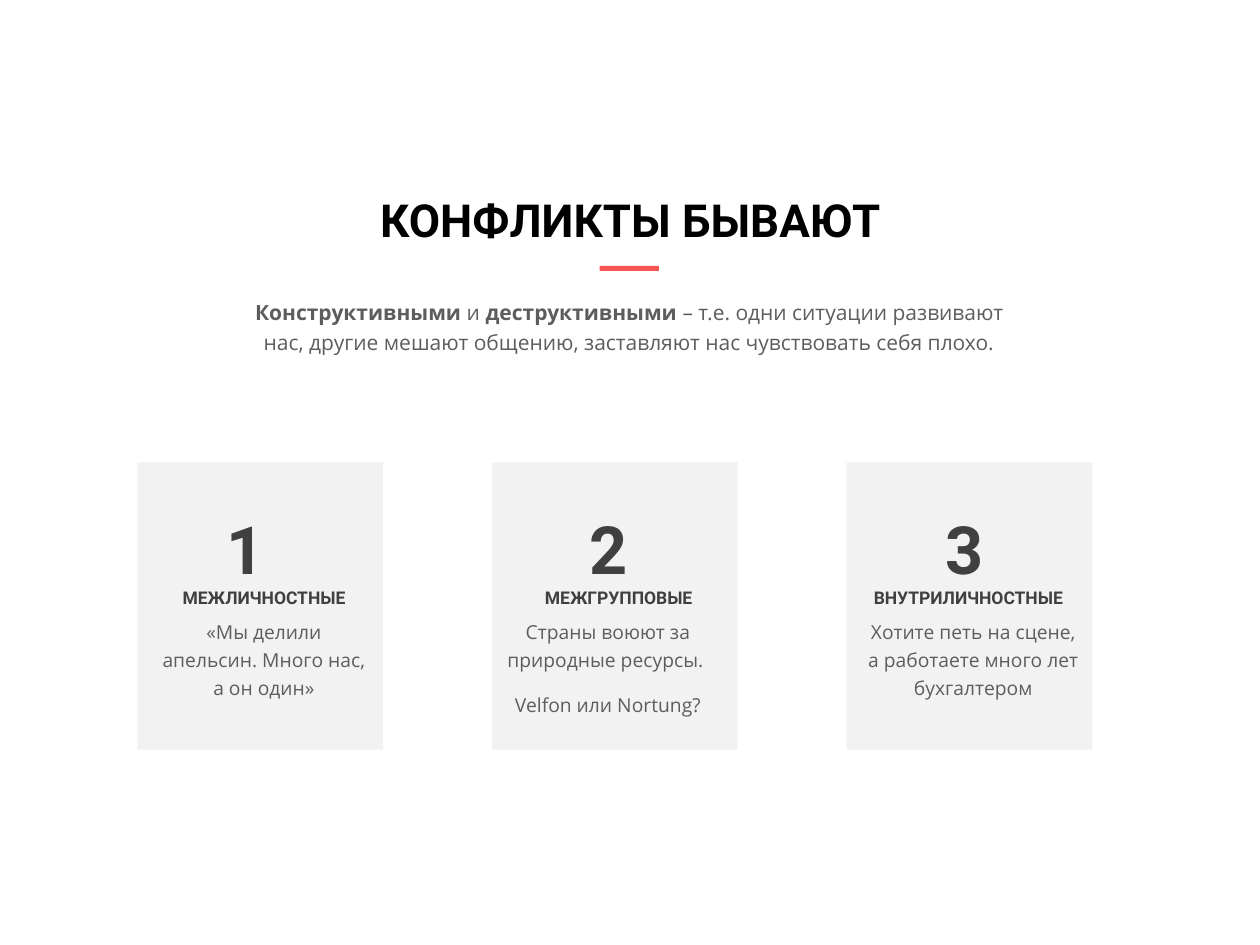
import pptx
import pptx.dml.color
import pptx.enum.shapes
import pptx.enum.text
import pptx.util

Inches = pptx.util.Inches
Pt = pptx.util.Pt

THEME = {
    "card": "F2F2F2",
    "accent": "F75655",
    "title": {"size": 26, "name": "Roboto", "color": "000000", "bold": True},
    "lead": {"size": 12, "name": "Open Sans", "color": "5D5D5D", "bold": False},
    "number": {"size": 38, "name": "Roboto", "color": "404040", "bold": True},
    "label": {"size": 10, "name": "Roboto", "color": "404040", "bold": True},
    "note": {"size": 11, "name": "Open Sans", "color": "5D5D5D", "bold": False},
}


def add_bar(page, left, top, width, height, color):
    """Add a plain filled rectangle without outline or shadow."""
    bar = page.shapes.add_shape(
        pptx.enum.shapes.MSO_SHAPE.RECTANGLE,
        Inches(left), Inches(top), Inches(width), Inches(height))
    bar.shadow.inherit = False
    bar.fill.solid()
    bar.fill.fore_color.rgb = pptx.dml.color.RGBColor.from_string(color)
    bar.line.fill.background()


def fill_text(box, paragraphs, style, wrap=True, line_spacing=1.0, side_inset=0.1):
    """Write paragraphs, each a list of (text, bold) spans; bold None keeps the style."""
    frame = box.text_frame
    settings = {
        "word_wrap": wrap,
        "auto_size": pptx.enum.text.MSO_AUTO_SIZE.NONE,
        "vertical_anchor": pptx.enum.text.MSO_ANCHOR.TOP,
        "margin_left": Inches(side_inset),
        "margin_right": Inches(side_inset),
    }
    for name, value in settings.items():
        setattr(frame, name, value)
    for index, spans in enumerate(paragraphs):
        para = frame.add_paragraph() if index else frame.paragraphs[0]
        para.alignment = pptx.enum.text.PP_ALIGN.CENTER
        para.line_spacing = line_spacing
        para.space_before = Pt(10 if index else 0)
        for text, bold in spans:
            span = para.add_run()
            span.text = text
            font_values = {
                "size": Pt(style["size"]),
                "name": style["name"],
                "bold": style["bold"] if bold is None else bold,
            }
            for name, value in font_values.items():
                setattr(span.font, name, value)
            span.font.color.rgb = pptx.dml.color.RGBColor.from_string(style["color"])


deck = pptx.Presentation()
deck.slide_width = Inches(10)
deck.slide_height = Inches(7.5)
page = deck.slides.add_slide(deck.slide_layouts.get_by_name("Title Only"))

# Heading
title = page.shapes.title
title_place = {"left": 1.86, "top": 1.47, "width": 6.29, "height": 0.44}
for name, value in title_place.items():
    setattr(title, name, Inches(value))
fill_text(title, [[("КОНФЛИКТЫ БЫВАЮТ", None)]], THEME["title"], wrap=False)
add_bar(page, 4.76, 2.11, 0.47, 0.04, THEME["accent"])

lead = page.shapes.add_textbox(Inches(1.85), Inches(2.29), Inches(6.29), Inches(0.83))
fill_text(lead, [[
    ("Конструктивными", True),
    (" и ", False),
    ("деструктивными", True),
    (" – т.е. одни ситуации развивают нас, другие мешают общению, "
     "заставляют нас чувствовать себя плохо.", False),
]], THEME["lead"], line_spacing=1.2)

# Cards: each text is paired with its left edge and width
CARD_LEFT, CARD_STEP = 1.09, 2.815
cards = [
    {"number": ("1 ", 1.17, 1.69),
     "label": ("МЕЖЛИЧНОСТНЫЕ", 1.25, 1.69),
     "note": (["«Мы делили апельсин. Много нас, а он один»"], 1.25, 1.69)},
    {"number": ("2", 3.98, 1.7),
     "label": ("МЕЖГРУППОВЫЕ", 4.06, 1.7),
     "note": (["Страны воюют за природные ресурсы. ", "Velfon или Nortung?"], 3.98, 1.69)},
    {"number": ("3 ", 6.88, 1.69),
     "label": ("ВНУТРИЛИЧНОСТНЫЕ", 6.8, 1.77),
     "note": (["Хотите петь на сцене, а работаете много лет бухгалтером"], 6.88, 1.69)},
]
rows = {"number": (3.98, 0.56), "label": (4.61, 0.27), "note": (4.84, 1.02)}

for index, card in enumerate(cards):
    add_bar(page, CARD_LEFT + index * CARD_STEP, 3.67, 1.95, 2.28, THEME["card"])
    for part, (top, height) in rows.items():
        text, left, width = card[part]
        box = page.shapes.add_textbox(
            Inches(left), Inches(top), Inches(width), Inches(height))
        if part == "note":
            fill_text(box, [[(line, None)] for line in text], THEME[part],
                      line_spacing=1.2, side_inset=0)
        else:
            fill_text(box, [[(text, None)]], THEME[part])

deck.save("out.pptx")
